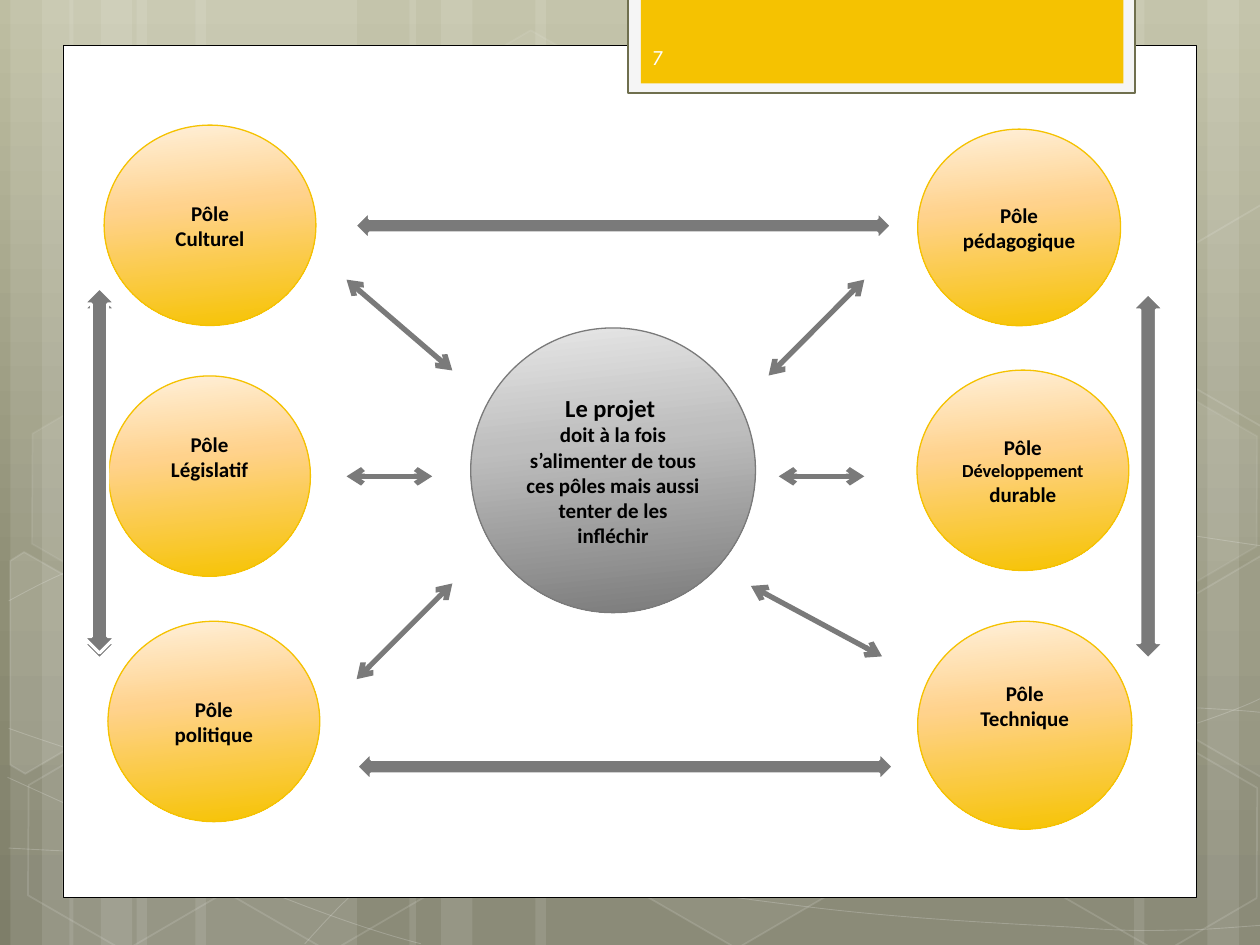
from math import cos, radians, sin

from lxml import etree
from pptx import Presentation
from pptx.dml.color import RGBColor
from pptx.enum.shapes import MSO_CONNECTOR, MSO_SHAPE
from pptx.enum.text import MSO_ANCHOR, PP_ALIGN
from pptx.oxml.ns import qn
from pptx.util import Pt

COLORS = {"white": "FFFFFF", "black": "000000", "gold": "F5C201", "gray": "7A7A7A",
          "frame": "F5F5F5", "olive": "6F6F4E", "number": "FEFEFE"}
BACKDROP = [(0, "BEBEA2"), (62, "8F8F76"), (100, "7E7E69")]
GOLD_FADE = [(0, "FFF1DC"), (40, "FFD28C"), (100, "F6C300")]
GRAY_FADE = [(0, "E7E7E7"), (40, "BEBEBE"), (100, "7A7A7A")]

# Start point, then two handles and an end point for each Bezier segment
CURVES = [
    [(5, 484.6), (43.9, 486.7), (82.8, 488.9), (136.8, 488.2), (190.8, 487.4), (257.8, 486),
     (329.8, 478.8), (401.8, 471.6), (504, 457.9), (570.2, 444.2), (635.8, 429.8),
     (703.4, 409), (725, 396.7)],
    [(5, 343.4), (25.9, 331.9), (46.8, 321.1), (87.1, 310.3), (128.2, 299.5), (186.5, 283.7),
     (249.8, 278.6), (313.9, 273.6), (391.7, 272.9), (470.9, 278.6), (550.1, 284.4),
     (681.8, 306.7), (725, 312.5)],
    [(4.3, 444.2), (91.4, 483.8), (177.8, 523.4), (240.5, 539.3)],
    [(5, 416.2), (27.4, 424.1), (50.4, 432), (92.2, 443.5), (133.9, 454.3), (196.6, 472.3),
     (257, 484.6), (316.8, 496.8), (392.4, 509.8), (452.2, 517), (511.9, 524.9),
     (576, 527.8), (614.2, 529.9), (651.6, 532.8), (661.7, 531.4), (680.4, 531.4),
     (699.1, 530.6), (712.1, 529.2), (725, 528.5)],
    [(174.2, 539.3), (187.2, 524.9), (200.2, 510.5), (217.4, 497.5), (234.7, 484.6),
     (259.2, 470.2), (279.4, 460.1), (299.5, 450), (311.8, 445.7), (338.4, 438.5),
     (364.3, 431.3), (412.6, 421.2), (437.8, 416.2), (463.7, 411.1), (467.3, 411.1),
     (489.6, 409.7), (511.9, 407.5), (547.2, 405.4), (571.7, 404.6), (596.9, 403.9),
     (637.9, 404.6), (637.9, 404.6), (654, 404.6), (670, 404.6), (686.2, 404.6),
     (699.1, 405.4), (711.4, 406.1), (717.8, 406.8), (724.3, 407.5), (722.2, 406.8),
     (724.3, 407.5)],
]
# Left, top, fill opacity, line opacity
HEXAGONS = [(240.5, 25.9, 4, 8), (357.8, 424.1, 6, 12), (7.9, 425.5, 0, 12),
            (10.1, 224.6, 7, 8), (125.3, 426.2, 0, 12), (542.2, 326.2, 10, 12),
            (600.5, 427, 0, 12), (600.5, 226.1, 7, 8)]
TILT = 30
LEFT_HEXAGON = [(5.8, 320.4), (13.7, 315.4), (69.1, 347), (68.4, 410.4), (14.4, 442.1),
                (5.8, 437)]
RIGHT_HEXAGON = [(666.7, 349.2), (720.7, 317.5), (726.5, 321.1), (726.5, 441.4),
                 (721.4, 444.2), (666.7, 412.6)]
# Box, second-line runs, extra space under the text
POLES = [((62.2, 214.8, 115.2, 114.5), [("Législatif", 12)], 22),
         ((59.5, 71.5, 121, 114.5), [("Culturel", 12)], 0),
         ((61.7, 355, 121, 114.5), [("politique", 12)], 0),
         ((524.4, 73.8, 115.9, 112.3), [("pédagogique", 12)], 0),
         ((524, 211.5, 121, 114.5), [("Développement ", 10.5), ("durable", 12)], 0),
         ((524.4, 355, 122.4, 118.8), [("Technique", 12)], 22)]
PROJECT = [[("Le projet ", 14)], [("doit à la fois", 12)],
           [("s’alimenter de tous ces pôles mais aussi tenter de les infléchir", 12)]]
# Left, top, width, height, rotation
BLOCK_ARROWS = [(202.8, 120.7, 306.7, 16.6, 0), (203.8, 429.8, 306.7, 16.6, 0),
                (-47.5, 262.8, 208.8, 18.7, 270), (551.7, 262.8, 208.8, 18.7, 270),
                (-47.5, 259.4, 208.8, 18.7, 270)]
LINKS = [(493.9, 159.8, 439.2, 214.6), (258.5, 333.4, 203.8, 388.1),
         (247, 272.2, 198, 272.2), (504, 375.1, 429.1, 334.8),
         (258.5, 211.7, 198, 159.8), (493.9, 272.2, 445, 272.2)]


def turn_back(points, cx, cy):
    """Undo the tilt around the centre, so that the shape can carry it as rotation."""
    c, n = cos(radians(TILT)), sin(radians(TILT))
    return [(cx + (x - cx) * c + (y - cy) * n, cy - (x - cx) * n + (y - cy) * c)
            for x, y in points]


def bend(sp):
    """Join each three straight segments of a freeform into one Bezier segment."""
    path = sp.element.xpath(".//a:path")[0]
    lines = path.findall(qn("a:lnTo"))
    for i in range(0, len(lines), 3):
        curve = etree.SubElement(path, qn("a:cubicBezTo"))
        for line in lines[i:i + 3]:
            curve.append(line[0])
            path.remove(line)


class Deck:
    font = "Calibri"

    def __init__(self):
        self.prs = Presentation()
        self.prs.slide_width, self.prs.slide_height = Pt(720), Pt(540)
        self.s = self.prs.slides.add_slide(self.prs.slide_layouts[6])

    def gradient(self, fill, element, stops, angle):
        """Fill with the stops; the angle runs clockwise."""
        fill.gradient()
        fill.gradient_angle = 360 - angle
        gs_list = element.xpath(".//a:gsLst")[0]
        for gs in list(gs_list):
            gs_list.remove(gs)
        for pos, color in stops:
            gs = etree.SubElement(gs_list, qn("a:gs"), pos=str(pos * 1000))
            etree.SubElement(gs, qn("a:srgbClr"), val=color)

    def paint(self, fill, color, opacity=100):
        """Apply a solid colour, or no fill when the colour or opacity is empty."""
        if not color or not opacity:
            fill.background()
            return
        fill.solid()
        fill.fore_color.rgb = RGBColor.from_string(COLORS[color])
        if opacity < 100:
            owner = fill._xPr.find(qn("a:solidFill"))
            etree.SubElement(owner[0], qn("a:alpha"), val=str(opacity * 1000))

    def style(self, sp, fill, line, width, fill_opacity=100, line_opacity=100):
        sp.shadow.inherit = False
        self.paint(sp.fill, fill, fill_opacity)
        self.paint(sp.line.fill, line, line_opacity)
        if line:
            sp.line.width = Pt(width)

    def shape(self, kind, box, fill=None, line=None, width=1, rotation=0, **opacity):
        sp = self.s.shapes.add_shape(kind, *map(Pt, box))
        sp.rotation = rotation
        self.style(sp, fill, line, width, **opacity)
        return sp

    def outline(self, points, fill=None, width=1, closed=True, **opacity):
        pts = [(Pt(x), Pt(y)) for x, y in points]
        builder = self.s.shapes.build_freeform(*pts[0], scale=1.0)
        builder.add_line_segments(pts[1:], close=closed)
        sp = builder.convert_to_shape()
        self.style(sp, fill, "white", width, **opacity)
        return sp

    def circle(self, box, paragraphs, stops, line, space_below=0):
        sp = self.shape(MSO_SHAPE.OVAL, box, None, line, 0.75)
        self.gradient(sp.fill, sp.element, stops, 84)
        tf = sp.text_frame
        tf.word_wrap = True
        tf.vertical_anchor = MSO_ANCHOR.MIDDLE
        tf.margin_bottom = Pt(3.6 + space_below)
        for i, runs in enumerate(paragraphs):
            p = tf.add_paragraph() if i else tf.paragraphs[0]
            p.alignment = PP_ALIGN.CENTER
            for text, size in runs:
                self.run(p, text, size, "black", self.font).bold = True

    def run(self, p, text, size, color, font):
        r = p.add_run()
        r.text = text
        r.font.size, r.font.name = Pt(size), font
        r.font.color.rgb = RGBColor.from_string(COLORS[color])
        return r.font

    def link(self, x1, y1, x2, y2):
        cn = self.s.shapes.add_connector(MSO_CONNECTOR.STRAIGHT, *map(Pt, (x1, y1, x2, y2)))
        self.paint(cn.line.fill, "gray")
        cn.line.width = Pt(3)
        for end in ("a:headEnd", "a:tailEnd"):
            etree.SubElement(cn.line._get_or_add_ln(), qn(end), type="arrow")
        etree.SubElement(cn.element.spPr, qn("a:effectLst"))

    def page_number(self, box, text):
        tf = self.s.shapes.add_textbox(*map(Pt, box)).text_frame
        tf.word_wrap = True
        tf.vertical_anchor = MSO_ANCHOR.MIDDLE
        self.run(tf.paragraphs[0], text, 12, "number", "League Spartan")


def draw_backdrop(deck):
    deck.gradient(deck.s.background.fill, deck.s.element, BACKDROP, 90)
    bands = [(x + dx, w) for x, wide in ((6, 126), (39.6, 126), (234, 222))
             for dx, w in ((72, wide), (0, 36), (18, 60))]
    bands += [(726 - dx - w, w) for dx, w in ((72, 126), (0, 36), (18, 60))]
    for x, w in bands:
        deck.shape(MSO_SHAPE.RECTANGLE, (x, 0, w, 540), "white", fill_opacity=10)
    for curve in CURVES:
        bend(deck.outline(curve, width=0.5, closed=False, line_opacity=20))
    for x, y, fill, line in HEXAGONS:
        sp = deck.shape(MSO_SHAPE.HEXAGON, (x, y, 126, 109.4), "white", "white", 1, TILT,
                        fill_opacity=fill, line_opacity=line)
        sp.adjustments[0] = 0.285
    upper_right = [(x, y - 200.5) for x, y in RIGHT_HEXAGON]
    for points, center, fill in ((LEFT_HEXAGON, (25.9, 385.2), 10),
                                 (RIGHT_HEXAGON, (709.2, 374.4), 4),
                                 (upper_right, (709.2, 173.9), 0)):
        sp = deck.outline(turn_back(points, *center), "white", fill_opacity=fill,
                          line_opacity=12)
        sp.rotation = TILT
    deck.shape(MSO_SHAPE.RECTANGLE, (36, 25.9, 648, 487), "white", "black", 0.5)
    deck.shape(MSO_SHAPE.RECTANGLE, (359, -1.4, 289.6, 54.7), "frame", "olive", 1.25)
    deck.shape(MSO_SHAPE.RECTANGLE, (366.2, -1.4, 275.8, 49), "gold")


def main():
    deck = Deck()
    draw_backdrop(deck)
    for box, runs, space_below in POLES:
        deck.circle(box, [[("Pôle", 12)], runs], GOLD_FADE, "gold", space_below)
    deck.circle((269, 187.4, 162.7, 162.7), PROJECT, GRAY_FADE, "gray")
    for *box, rotation in BLOCK_ARROWS:
        deck.shape(MSO_SHAPE.LEFT_RIGHT_ARROW, box, "gray", "white", 1.75, rotation)
    for ends in LINKS:
        deck.link(*ends)
    deck.page_number((365.8, 18, 105.1, 28.8), "7")
    deck.prs.save("out.pptx")


if __name__ == "__main__":
    main()
